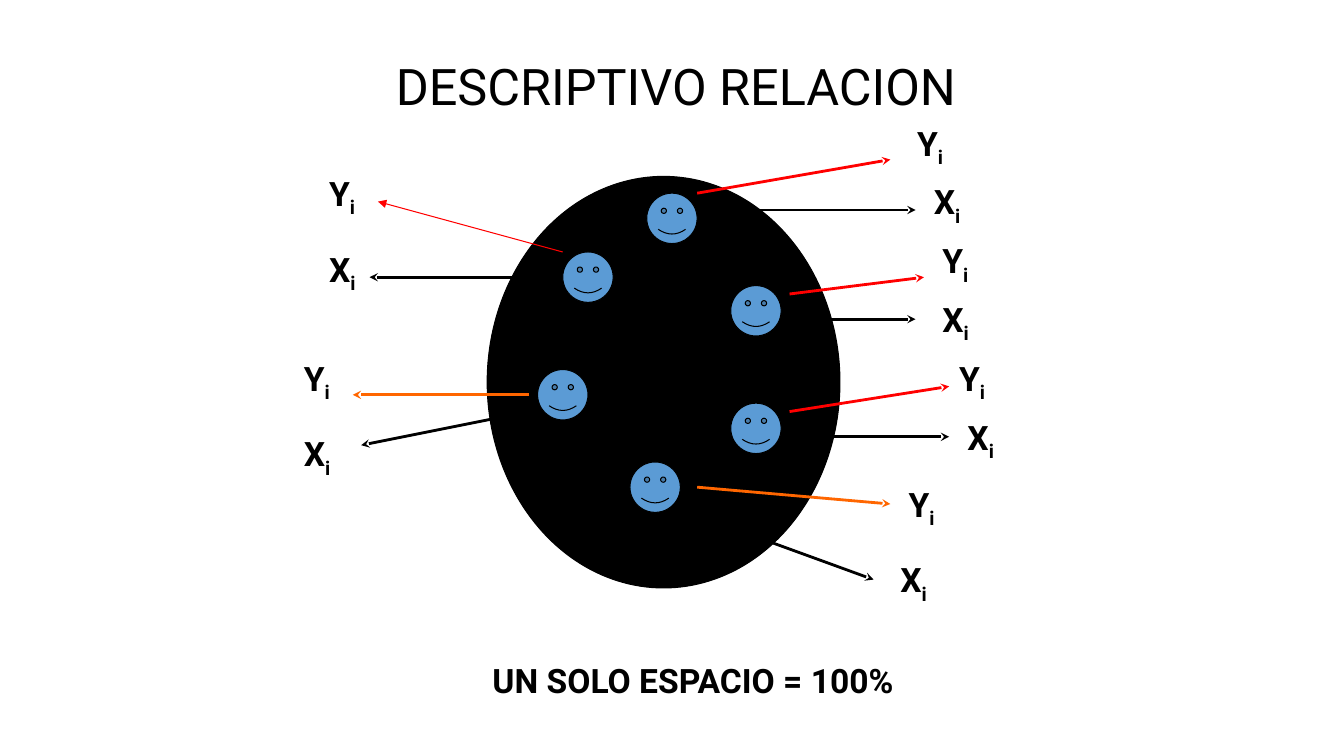
from pptx import Presentation
from pptx.dml.color import RGBColor
from pptx.enum.shapes import MSO_CONNECTOR, MSO_SHAPE
from pptx.enum.text import MSO_AUTO_SIZE, PP_ALIGN
from pptx.oxml.ns import qn
from pptx.util import Emu, Pt
from lxml import etree

OVAL = MSO_SHAPE.OVAL
SMILE = MSO_SHAPE.SMILEY_FACE
LINE = MSO_CONNECTOR.STRAIGHT
GROW = MSO_AUTO_SIZE.SHAPE_TO_FIT_TEXT
LEFT, MID = PP_ALIGN.LEFT, PP_ALIGN.CENTER

BLACK = RGBColor(0x00, 0x00, 0x00)
BLUE = RGBColor(0x5B, 0x9B, 0xD5)
RED = RGBColor(0xFF, 0x00, 0x00)
AMBER = RGBColor(0xFF, 0x66, 0x00)

FONT = "Roboto"
PX = 9525
FACE = 48
TAG = (56, 48)

TITLE = ("DESCRIPTIVO RELACION", (280, 48, 728, 67))
FOOT = ("UN SOLO ESPACIO = 100%", (392, 624, 536, 48))
SPACE = (464, 168, 336, 392)
FACES = [(616, 184), (696, 272), (536, 240), (512, 352), (696, 384), (600, 440)]
TAGS = {
    "X": [(880, 168), (888, 280), (912, 392), (848, 528), (304, 232), (280, 408)],
    "Y": [(864, 112), (888, 224), (904, 336), (856, 456), (304, 160), (280, 336)],
}
ARROWS = [
    (BLACK, 2, "stealth", [
        (680, 200, 872, 200),
        (752, 304, 872, 304),
        (752, 416, 904, 416),
        (656, 488, 832, 552),
        (528, 264, 352, 264),
        (504, 392, 344, 424),
    ]),
    (AMBER, 2, "stealth", [(504, 376, 336, 376), (664, 464, 848, 480)]),
    (RED, 2, "stealth", [
        (664, 184, 848, 152),
        (752, 280, 880, 264),
        (752, 392, 904, 368),
    ]),
    (RED, 0.75, "triangle", [(536, 240, 360, 192)]),
]


def scale(box):
    return [Emu(n * PX) for n in box]


def add_form(slide, kind, box, fill):
    form = slide.shapes.add_shape(kind, *scale(box))
    form.shadow.inherit = False
    form.fill.solid()
    form.fill.fore_color.rgb = fill
    form.line.color.rgb = BLACK
    form.line.width = Pt(0.75)


def add_arrow(slide, ends, color, width, head):
    arrow = slide.shapes.add_connector(LINE, *scale(ends))
    arrow.line.color.rgb = color
    arrow.line.width = Pt(width)
    props = arrow._element.spPr
    etree.SubElement(props.find(qn("a:ln")), qn("a:tailEnd"), type=head)
    etree.SubElement(props, qn("a:effectLst"))


def add_text(slide, box, runs, size=24, bold=True, align=LEFT):
    frame = slide.shapes.add_textbox(*scale(box)).text_frame
    frame.word_wrap = True
    frame.auto_size = GROW
    para = frame.paragraphs[0]
    para.alignment = align
    for text, base in runs:
        run = para.add_run()
        run.text = text
        font = run.font
        font.name, font.size, font.bold = FONT, Pt(size), bold
        font.color.rgb = BLACK
        if base:
            run._r.get_or_add_rPr().set("baseline", str(base * 1000))


def main():
    deck = Presentation()
    deck.slide_width, deck.slide_height = scale((1280, 720))
    slide = deck.slides.add_slide(deck.slide_layouts[6])

    text, box = TITLE
    add_text(slide, box, [(text, 0)], size=36, bold=False, align=MID)
    add_form(slide, OVAL, SPACE, BLACK)
    for spot in FACES:
        add_form(slide, SMILE, (*spot, FACE, FACE), BLUE)
    for color, width, head, lines in ARROWS:
        for ends in lines:
            add_arrow(slide, ends, color, width, head)
    for name, spots in TAGS.items():
        for spot in spots:
            add_text(slide, (*spot, *TAG), [(name, 0), ("i", -25)])
    text, box = FOOT
    add_text(slide, box, [(text, 0)], align=MID)

    deck.save("out.pptx")


if __name__ == "__main__":
    main()
